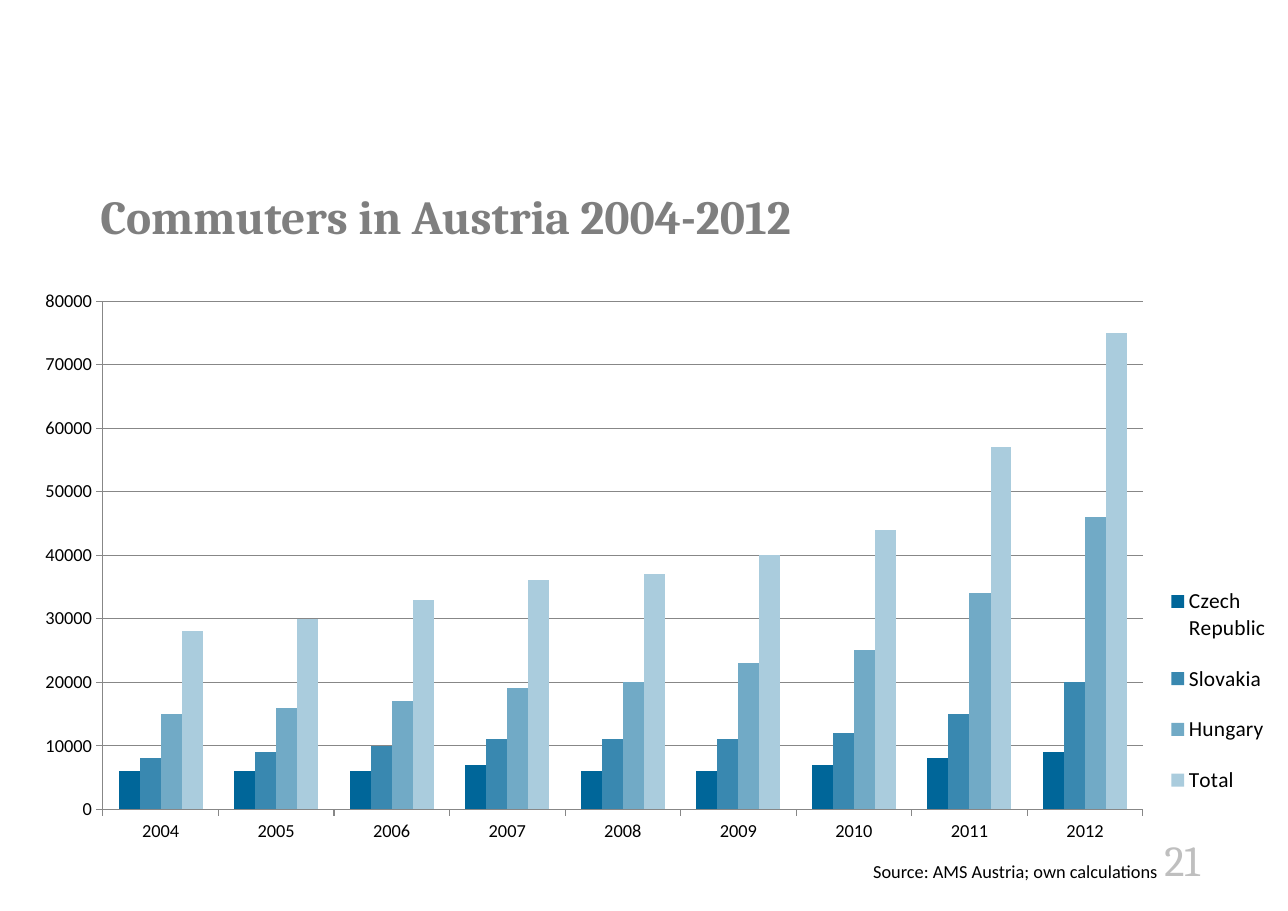
from dataclasses import dataclass

from lxml import etree
from pptx import Presentation
from pptx import util as u
from pptx.chart.data import CategoryChartData
from pptx.dml.color import RGBColor
from pptx.enum import chart as charts, text
from pptx.oxml import ns


@dataclass(frozen=True)
class Theme:
    heading_font: str = "Cambria"
    body_font: str = "Calibri"
    title: str = "7F7F7F"
    number: str = "BFBFBF"
    ink: str = "000000"
    rule: str = "878787"
    series: tuple = ("006699", "3988B0", "71AAC6", "AACCDD")
    title_size: int = 31
    number_size: int = 28
    legend_size: int = 14
    label_size: int = 12


THEME = Theme()
YEARS = [str(year) for year in range(2004, 2013)]
COMMUTERS = {  # thousands
    "Czech Republic": (6, 6, 6, 7, 6, 6, 7, 8, 9),
    "Slovakia": (8, 9, 10, 11, 11, 11, 12, 15, 20),
    "Hungary": (15, 16, 17, 19, 20, 23, 25, 34, 46),
    "Total": (28, 30, 33, 36, 37, 40, 44, 57, 75),
}


def style_font(font, size, color=THEME.ink, name=THEME.body_font, bold=False):
    font.size, font.name, font.bold = u.Pt(size), name, bold
    font.color.rgb = RGBColor.from_string(color)


def write(frame, words, align=text.PP_ALIGN.LEFT, spacing=None, **style):
    """Fill a text frame with one formatted paragraph."""
    frame.word_wrap = True
    frame.vertical_anchor = text.MSO_ANCHOR.TOP
    para = frame.paragraphs[0]
    para.alignment = align
    if spacing:
        para.line_spacing = u.Pt(spacing)
    span = para.add_run()
    span.text = words
    style_font(span.font, **style)


def set_layout(parent, position, inner=False):
    """Place a chart part by fractions of the chart's size."""
    for old in parent.findall(ns.qn("c:layout")):
        parent.remove(old)
    layout = etree.Element(ns.qn("c:layout"))
    manual = etree.SubElement(layout, ns.qn("c:manualLayout"))
    settings = [("layoutTarget", "inner")] if inner else []
    settings += [("xMode", "edge"), ("yMode", "edge"), *zip("xywh", position)]
    for tag, value in settings:
        etree.SubElement(manual, ns.qn(f"c:{tag}")).set("val", str(value))
    # The layout follows legendPos in a legend and comes first in a plot area
    parent.insert(0 if inner else 1, layout)


class SlideBuilder:
    def __init__(self, deck, theme):
        self.theme = theme
        self.page = deck.slides.add_slide(deck.slide_layouts[5])

    def title(self, words, left, top, width, height):
        box = self.page.shapes.title
        box.left, box.top = u.Cm(left), u.Cm(top)
        box.width, box.height = u.Cm(width), u.Cm(height)
        box.text_frame.auto_size = text.MSO_AUTO_SIZE.NONE
        write(box.text_frame, words, spacing=34, size=self.theme.title_size,
              color=self.theme.title, name=self.theme.heading_font, bold=True)

    def label(self, words, left, top, width, height, **style):
        box = self.page.shapes.add_textbox(
            u.Cm(left), u.Cm(top), u.Cm(width), u.Cm(height))
        write(box.text_frame, words, align=text.PP_ALIGN.RIGHT, **style)
        box.text_frame.auto_size = text.MSO_AUTO_SIZE.SHAPE_TO_FIT_TEXT

    def rule(self, line):
        line.width = u.Pt(0.75)
        line.color.rgb = RGBColor.from_string(self.theme.rule)

    def column_chart(self, categories, table, left, top, width, height):
        data = CategoryChartData(number_format="General")
        data.categories = categories
        for name, thousands in table.items():
            data.add_series(name, [value * 1000 for value in thousands])
        chart = self.page.shapes.add_chart(
            charts.XL_CHART_TYPE.COLUMN_CLUSTERED,
            u.Cm(left), u.Cm(top), u.Cm(width), u.Cm(height), data).chart
        chart.has_title = False
        style_font(chart.font, self.theme.label_size)

        # Columns
        plot = chart.plots[0]
        plot.gap_width, plot.overlap = 150, 0
        plot.vary_by_categories = False
        for series, color in zip(plot.series, self.theme.series):
            series.format.fill.solid()
            series.format.fill.fore_color.rgb = RGBColor.from_string(color)
            series.invert_if_negative = False

        # Axes
        for axis in (chart.category_axis, chart.value_axis):
            axis.major_tick_mark = charts.XL_TICK_MARK.OUTSIDE
            axis.minor_tick_mark = charts.XL_TICK_MARK.NONE
            style_font(axis.tick_labels.font, self.theme.label_size)
            self.rule(axis.format.line)
        scale = chart.value_axis
        scale.minimum_scale, scale.maximum_scale = 0, 80000
        scale.major_unit = 10000
        scale.has_major_gridlines = True
        self.rule(scale.major_gridlines.format.line)

        # Legend and plot area
        chart.has_legend = True
        legend = chart.legend
        legend.position = charts.XL_LEGEND_POSITION.RIGHT
        legend.include_in_layout = False
        style_font(legend.font, self.theme.legend_size)
        set_layout(legend._element, (0.9, 0.5, 0.09, 0.45))
        plot_area = chart._chartSpace.chart.plotArea
        set_layout(plot_area, (0.058, 0.034, 0.827, 0.901), inner=True)


def main():
    deck = Presentation()
    deck.slide_width, deck.slide_height = u.Cm(29.7), u.Cm(21)
    slide = SlideBuilder(deck, THEME)

    # Page number
    slide.label("21", 21.92, 19.1, 6, 1.45, size=THEME.number_size,
                color=THEME.number, name=THEME.heading_font)

    # Title, chart and source
    slide.title("Commuters in Austria 2004-2012", 2.06, 4.3, 25.6, 2.7)
    slide.column_chart(YEARS, COMMUTERS, 0.69, 6.5, 29, 13)
    slide.label("Source: AMS Austria; own calculations",
                18.26, 19.7, 8.69, 0.76, size=THEME.label_size)

    deck.save("out.pptx")


if __name__ == "__main__":
    main()
